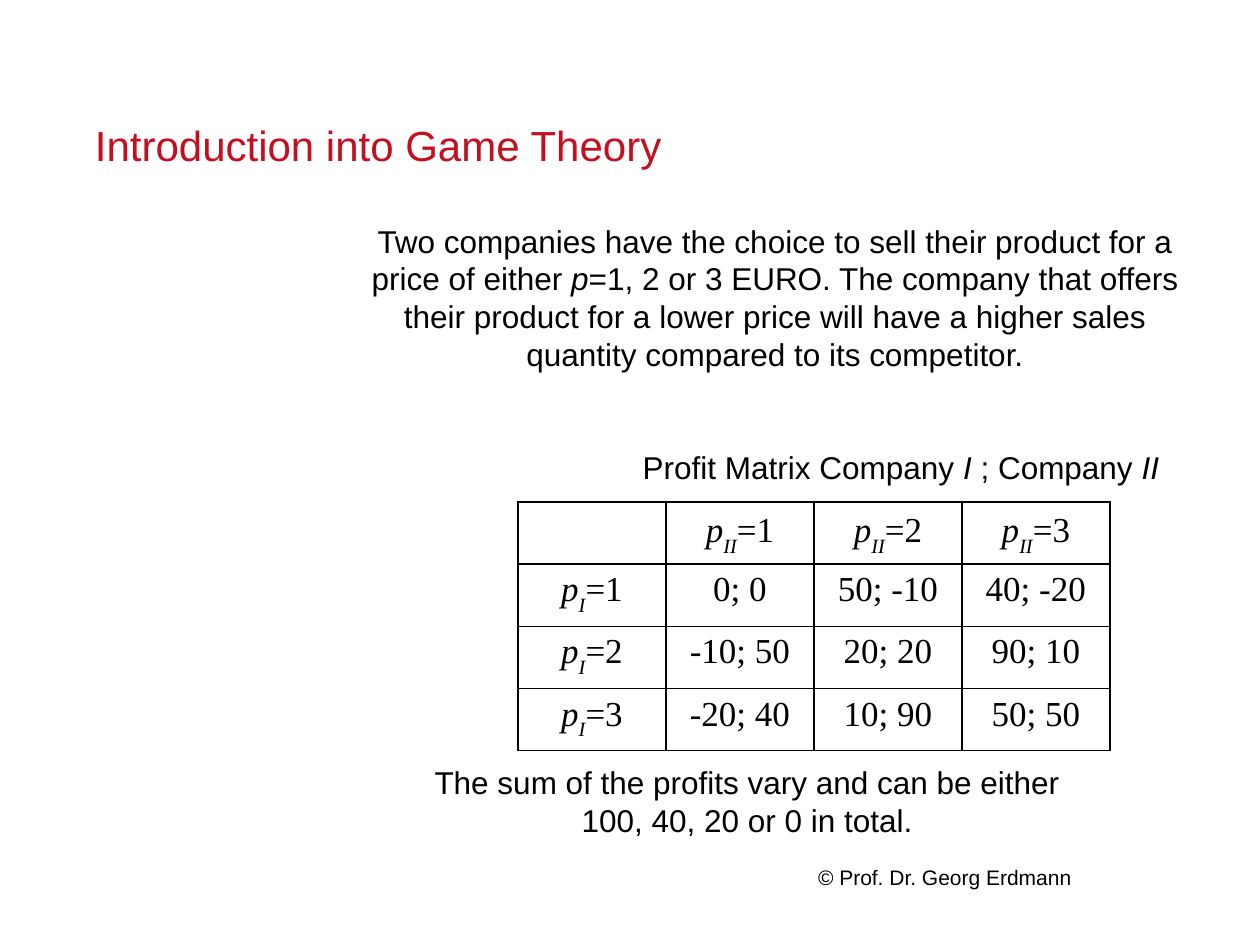
from lxml import etree
from pptx import Presentation
from pptx.dml.color import RGBColor
from pptx.enum.text import MSO_ANCHOR, PP_ALIGN
from pptx.oxml.ns import qn
from pptx.util import Pt

LEFT, CENTER, RIGHT = PP_ALIGN.LEFT, PP_ALIGN.CENTER, PP_ALIGN.RIGHT
TOP, MIDDLE, BOTTOM = MSO_ANCHOR.TOP, MSO_ANCHOR.MIDDLE, MSO_ANCHOR.BOTTOM
PX = 914400 // 126
BLACK, RED = "000000", "C50E1F"
PLAIN, ITALIC, SUBSCRIPT = "plain", "italic", "subscript"

TITLE = [("Introduction into Game Theory", PLAIN)]
INTRO = [
    ("Two companies have the choice to sell their product for a price of either ", PLAIN),
    ("p", ITALIC),
    ("=1, 2 or 3 EURO. The company that offers their product for a lower price "
     "will have a higher sales quantity compared to its competitor.", PLAIN),
]
CAPTION = [("Profit Matrix Company ", PLAIN), ("I", ITALIC),
           (" ; Company ", PLAIN), ("II", ITALIC)]
SUMMARY = [
    [("The sum of the profits vary and can be either ", PLAIN)],
    [("100, 40, 20 or 0 in total. ", PLAIN)],
]
COPYRIGHT = [("© Prof. Dr. Georg Erdmann", PLAIN)]
PRICES = [1, 2, 3]
PROFITS = [
    ["0; 0", "50; -10", "40; -20"],
    ["-10; 50", "20; 20", "90; 10"],
    ["-20; 40", "10; 90", "50; 50"],
]

BODY = {"size": Pt(18), "name": "Arial"}
HEADING = {"size": Pt(24), "name": "Arial"}
SMALL = {"size": Pt(12), "name": "Arial"}
MATRIX = {"size": Pt(20), "name": "Times New Roman"}
BODY_LINE = Pt(21.6)
CAPTION_INDENT = 252
COLUMN_WIDTH, ROW_HEIGHT = 148, 54


def color(value):
    return RGBColor.from_string(value)


def apply(target, values):
    for name, value in values.items():
        setattr(target, name, value)


def place(shape, left, top, width, height):
    apply(shape, {"left": left * PX, "top": top * PX,
                  "width": width * PX, "height": height * PX})


def write(para, spans, font, ink=BLACK, **layout):
    apply(para, layout)
    for text, style in spans:
        span = para.add_run()
        span.text = text
        apply(span.font, {**font, "italic": style != PLAIN})
        span.font.color.rgb = color(ink)
        if style == SUBSCRIPT:
            span.font._element.set("baseline", "-30000")


def add_box(page, bounds, anchor):
    box = page.shapes.add_textbox(*(length * PX for length in bounds))
    apply(box.text_frame, {"word_wrap": True, "vertical_anchor": anchor})
    return box.text_frame


def price_label(company, price):
    return [("p", ITALIC), (company, SUBSCRIPT), (f"={price}", PLAIN)]


def add_borders(cell):
    properties = cell._tc.get_or_add_tcPr()
    for index, side in enumerate(("a:lnL", "a:lnR", "a:lnT", "a:lnB")):
        line = etree.Element(qn(side), w=str(Pt(1)))
        fill = etree.SubElement(line, qn("a:solidFill"))
        etree.SubElement(fill, qn("a:srgbClr"), val=BLACK)
        properties.insert(index, line)


def add_matrix(page, left, top):
    rows = [[[]] + [price_label("II", price) for price in PRICES]]
    for price, profits in zip(PRICES, PROFITS):
        rows.append([price_label("I", price)] + [[(text, PLAIN)] for text in profits])
    count = len(rows)
    table = page.shapes.add_table(
        count, count, left * PX, top * PX,
        count * COLUMN_WIDTH * PX, count * ROW_HEIGHT * PX).table
    apply(table, {"first_row": False, "horz_banding": False})
    for row_index, row in enumerate(rows):
        for column_index, spans in enumerate(row):
            cell = table.cell(row_index, column_index)
            cell.fill.background()
            cell.vertical_anchor = TOP if row_index else BOTTOM
            write(cell.text_frame.paragraphs[0], spans, MATRIX, alignment=CENTER)
            add_borders(cell)


def main():
    """Build the game theory slide and save it."""
    deck = Presentation()
    apply(deck, {"slide_width": 1260 * PX, "slide_height": 945 * PX})
    page = deck.slides.add_slide(deck.slide_layouts[5])

    title = page.shapes.title
    place(title, 95, 53, 1071, 117)
    apply(title.text_frame, {"vertical_anchor": BOTTOM, "margin_left": 0, "margin_top": 0,
                             "margin_right": 0, "margin_bottom": 0})
    write(title.text_frame.paragraphs[0], TITLE, HEADING, RED,
          alignment=LEFT, line_spacing=Pt(30))

    body = {"alignment": CENTER, "line_spacing": BODY_LINE}
    intro = add_box(page, (346, 214, 858, 280), MIDDLE)
    write(intro.paragraphs[0], INTRO, BODY, **body)
    caption = intro.add_paragraph()
    write(caption, CAPTION, BODY, space_before=2 * BODY_LINE, **body)
    caption._p.get_or_add_pPr().set("marL", str(CAPTION_INDENT * PX))

    add_matrix(page, 518, 502)

    summary = add_box(page, (346, 757, 811, 127), TOP)
    summary.add_paragraph()
    for para, spans in zip(summary.paragraphs, SUMMARY):
        write(para, spans, BODY, **body)

    footer = add_box(page, (776, 858, 308, 38), TOP)
    write(footer.paragraphs[0], COPYRIGHT, SMALL, alignment=RIGHT)
    deck.save("out.pptx")


if __name__ == "__main__":
    main()
